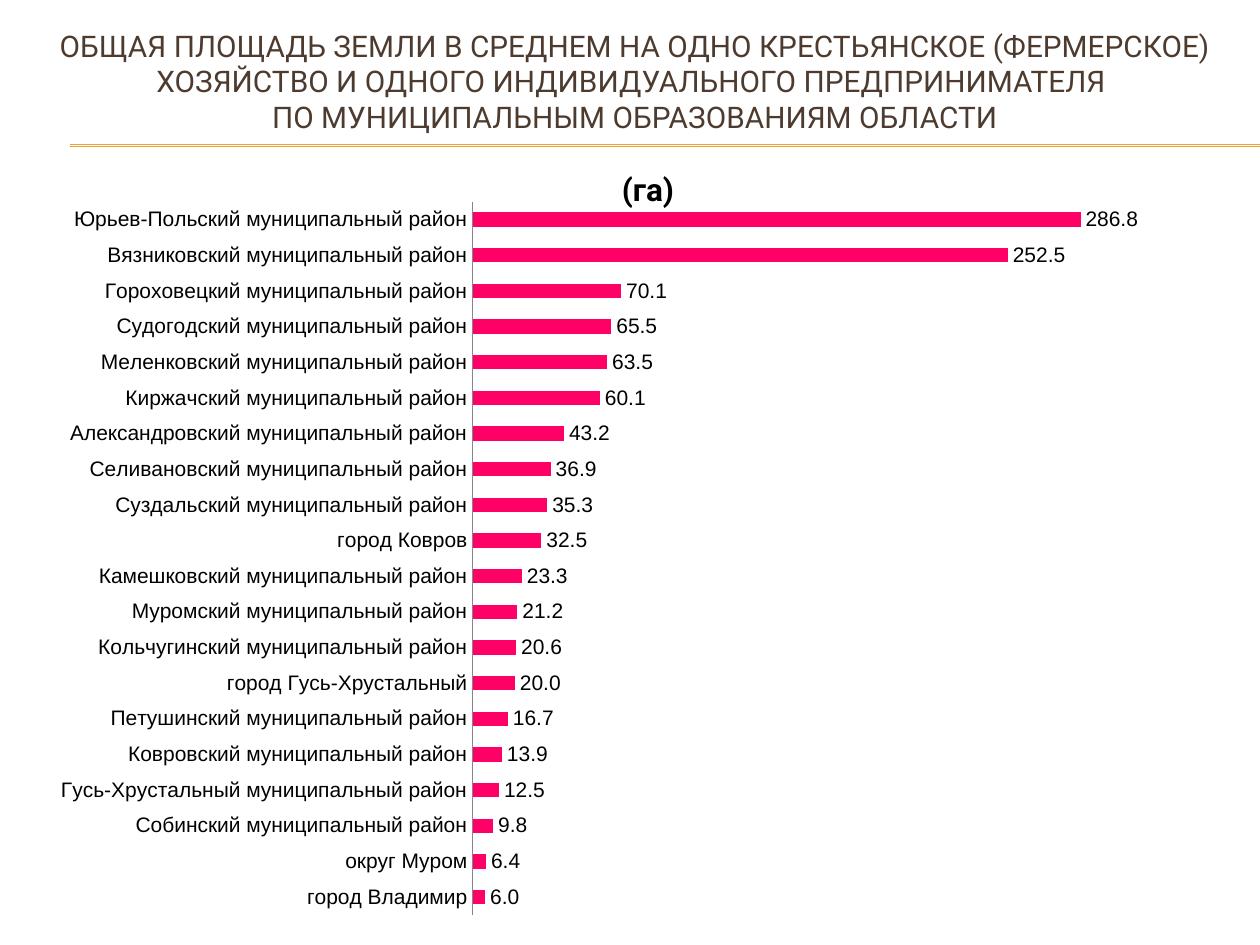
from dataclasses import dataclass

import lxml.etree
import pptx
import pptx.chart.data
import pptx.dml.color
import pptx.enum.chart
import pptx.enum.shapes
import pptx.enum.text
import pptx.oxml
import pptx.oxml.ns
import pptx.util

Cm = pptx.util.Cm
Pt = pptx.util.Pt
qn = pptx.oxml.ns.qn


@dataclass(frozen=True)
class Theme:
    head: str = "Roboto"
    body: str = "Arial"
    brown: str = "4E3B30"
    gold: str = "F0A22E"
    pink: str = "FF0066"
    black: str = "000000"
    gray: str = "868686"
    title: float = 17
    unit: float = 18
    label: float = 12
    base: float = 10


@dataclass(frozen=True)
class Rule:
    left: float
    right: float
    top: float


@dataclass(frozen=True)
class Area:
    name: str
    land: float


THEME = Theme()
RULES = [Rule(1.42, 25.4, top) for top in (2.92, 2.95)]
TITLE = (
    "ОБЩАЯ ПЛОЩАДЬ ЗЕМЛИ В СРЕДНЕМ НА ОДНО КРЕСТЬЯНСКОЕ (ФЕРМЕРСКОЕ) "
    "ХОЗЯЙСТВО И ОДНОГО ИНДИВИДУАЛЬНОГО ПРЕДПРИНИМАТЕЛЯ \n"
    "ПО МУНИЦИПАЛЬНЫМ ОБРАЗОВАНИЯМ ОБЛАСТИ"
)
KIND = " муниципальный район"
AREAS = [
    Area("город Владимир", 6),
    Area("округ Муром", 6.4),
    Area("Собинский" + KIND, 9.8),
    Area("Гусь-Хрустальный" + KIND, 12.5),
    Area("Ковровский" + KIND, 13.9),
    Area("Петушинский" + KIND, 16.7),
    Area("город Гусь-Хрустальный", 20),
    Area("Кольчугинский" + KIND, 20.6),
    Area("Муромский" + KIND, 21.2),
    Area("Камешковский" + KIND, 23.3),
    Area("город Ковров", 32.5),
    Area("Суздальский" + KIND, 35.3),
    Area("Селивановский" + KIND, 36.9),
    Area("Александровский" + KIND, 43.2),
    Area("Киржачский" + KIND, 60.1),
    Area("Меленковский" + KIND, 63.5),
    Area("Судогодский" + KIND, 65.5),
    Area("Гороховецкий" + KIND, 70.1),
    Area("Вязниковский" + KIND, 252.5),
    Area("Юрьев-Польский" + KIND, 286.8),
]


def tint(code: str) -> pptx.dml.color.RGBColor:
    return pptx.dml.color.RGBColor.from_string(code)


def style(font, size: float, face: str, color: str, bold: bool = False) -> None:
    font.size = Pt(size)
    font.name = face
    font.bold = bold
    font.color.rgb = tint(color)


def write(frame, text: str, *, size: float, face: str, color: str,
          bold: bool = False) -> None:
    para = frame.paragraphs[0]
    para.alignment = pptx.enum.text.PP_ALIGN.CENTER
    for num, line in enumerate(text.split("\n")):
        if num:
            para.add_line_break()
        run = para.add_run()
        run.text = line
        style(run.font, size, face, color, bold)


def draw_rule(slide, rule: Rule) -> None:
    line = slide.shapes.add_connector(
        pptx.enum.shapes.MSO_CONNECTOR.STRAIGHT,
        Cm(rule.left), Cm(rule.top), Cm(rule.right), Cm(rule.top))
    line.line.color.rgb = tint(THEME.gold)
    line.line.width = Pt(0.75)
    lxml.etree.SubElement(line.element.spPr, qn("a:effectLst"))


def place(node, spot: int, **marks) -> None:
    for old in node.findall(qn("c:layout")):
        node.remove(old)
    plan = pptx.oxml.parse_xml(
        f'<c:layout {pptx.oxml.ns.nsdecls("c")}><c:manualLayout/></c:layout>')
    for tag, mark in marks.items():
        lxml.etree.SubElement(plan[0], qn("c:" + tag)).set("val", str(mark))
    node.insert(spot, plan)


def draw_title(slide) -> None:
    title = slide.shapes.title
    title.left, title.top = Cm(0.5), Cm(0.33)
    title.width, title.height = Cm(24.6), Cm(2.6)
    frame = title.text_frame
    frame.word_wrap = True
    frame.auto_size = pptx.enum.text.MSO_AUTO_SIZE.NONE
    frame.vertical_anchor = pptx.enum.text.MSO_ANCHOR.MIDDLE
    write(frame, TITLE, size=THEME.title, face=THEME.head, color=THEME.brown)


def draw_chart(slide, areas: list[Area]) -> None:
    enum = pptx.enum.chart
    data = pptx.chart.data.CategoryChartData(number_format="0.0")
    data.categories = [area.name for area in areas]
    data.add_series("Series 1", [area.land for area in areas])
    chart = slide.shapes.add_chart(
        enum.XL_CHART_TYPE.BAR_CLUSTERED,
        Cm(0.84), Cm(3.12), Cm(24.13), Cm(15.8), data).chart
    style(chart.font, THEME.base, THEME.head, THEME.black)
    chart.has_legend = False
    chart.has_title = True
    head = chart.chart_title
    write(head.text_frame, "(га)", size=THEME.unit, face=THEME.head,
          color=THEME.black, bold=True)
    place(head.element, 1, xMode="edge", yMode="edge", x=0.48, y=0.01)
    place(chart.element.find(".//" + qn("c:plotArea")), 0,
          layoutTarget="inner", xMode="edge", yMode="edge",
          x=0.36, y=0.06, w=0.62, h=0.91)

    names = chart.category_axis
    names.major_tick_mark = enum.XL_TICK_MARK.NONE
    names.format.line.color.rgb = tint(THEME.gray)
    style(names.tick_labels.font, THEME.label, THEME.body, THEME.black)
    scale = chart.value_axis
    scale.minimum_scale, scale.maximum_scale = 0, 350
    scale.has_major_gridlines = False
    scale.visible = False

    plot = chart.plots[0]
    plot.vary_by_categories = False
    plot.gap_width, plot.overlap = 150, -25
    bars = plot.series[0].format
    bars.fill.solid()
    bars.fill.fore_color.rgb = tint(THEME.pink)
    plot.has_data_labels = True
    tags = plot.data_labels
    tags.show_value = True
    tags.number_format = "0.0"
    tags.number_format_is_linked = False
    tags.position = enum.XL_LABEL_POSITION.OUTSIDE_END
    style(tags.font, THEME.label, THEME.body, THEME.black)


def main() -> None:
    deck = pptx.Presentation()
    deck.slide_width, deck.slide_height = Cm(25.4), Cm(19.05)
    slide = deck.slides.add_slide(deck.slide_layouts.get_by_name("Title Only"))
    for rule in RULES:
        draw_rule(slide, rule)
    draw_title(slide)
    draw_chart(slide, AREAS)
    deck.save("out.pptx")


if __name__ == "__main__":
    main()
